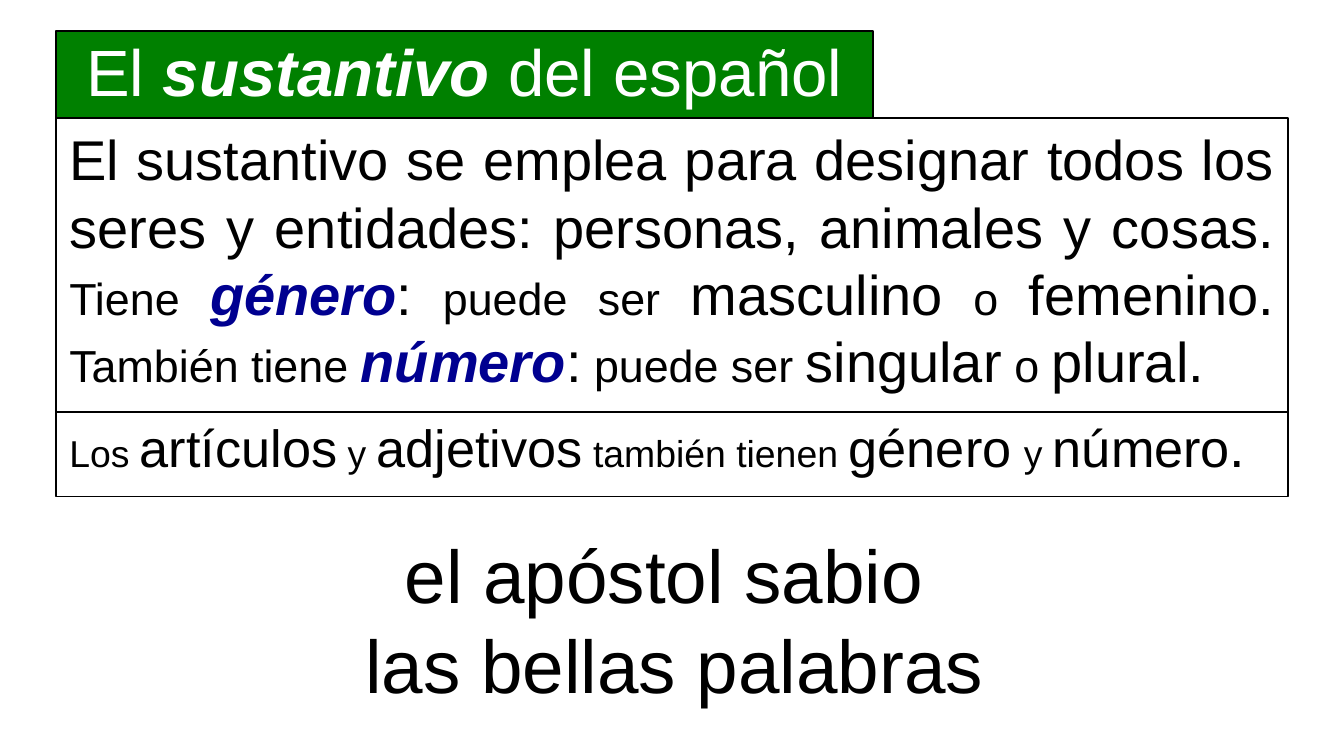
from pptx import Presentation
from pptx.dml.color import RGBColor
from pptx.enum.shapes import MSO_SHAPE
from pptx.enum.text import MSO_ANCHOR, MSO_AUTO_SIZE, PP_ALIGN
from pptx.util import Cm, Pt

BLACK = RGBColor(0, 0, 0)
WHITE = RGBColor(255, 255, 255)
GREEN = RGBColor(0, 0x80, 0)
NAVY = RGBColor(0, 0, 0x90)

# Content: paragraphs of (text, size, is key term)
HEADING = [[("El ", 35, False), ("sustantivo ", 35, True),
            ("del español", 35, False)]]
DEFINITION = [[
    ("El sustantivo se emplea para designar todos los seres y entidades: "
     "personas, animales y cosas. ", 30, False),
    ("Tiene ", 24, False), ("género", 30, True), (":", 30, False),
    (" puede ser ", 24, False), ("masculino", 30, False),
    (" o ", 24, False), ("femenino. ", 30, False),
    ("También tiene ", 24, False), ("número", 30, True), (":", 30, False),
    (" puede ser ", 24, False), ("singular", 30, False),
    (" o ", 24, False), ("plural. ", 30, False),
]]
AGREEMENT = [[
    ("Los ", 20, False), ("artículos", 28, False), (" y ", 20, False),
    ("adjetivos", 28, False), (" también tienen ", 20, False),
    ("género", 28, False), (" ", 24, False), ("y ", 20, False),
    ("número", 28, False), (".", 30, False),
]]
EXAMPLES = [[("el apóstol sabio ", 40, False)],
            [("las bellas palabras", 40, False)]]

# Stacked panels share a left edge
LEFT, TOP = Cm(1.06), Cm(0.58)
HEADING_WIDTH, PANEL_WIDTH = Cm(15.44), Cm(23.28)
HEADING_HEIGHT, DEFINITION_HEIGHT, AGREEMENT_HEIGHT = Cm(1.65), Cm(5.55), Cm(1.6)
DEFINITION_TOP = TOP + HEADING_HEIGHT
AGREEMENT_TOP = DEFINITION_TOP + DEFINITION_HEIGHT


def write(shape, paragraphs, *, align, color=BLACK, term_color=NAVY,
          inset_top=Cm(0.13)):
    frame = shape.text_frame
    frame.word_wrap = True
    frame.auto_size = MSO_AUTO_SIZE.NONE
    frame.vertical_anchor = MSO_ANCHOR.TOP
    frame.margin_left = frame.margin_right = Cm(0.25)
    frame.margin_top, frame.margin_bottom = inset_top, Cm(0.13)
    for index, pieces in enumerate(paragraphs):
        paragraph = frame.add_paragraph() if index else frame.paragraphs[0]
        paragraph.alignment = align
        paragraph.space_before = paragraph.space_after = Pt(0)
        for text, size, is_term in pieces:
            run = paragraph.add_run()
            run.text = text
            run.font.name = "Arial"
            run.font.size = Pt(size)
            run.font.bold = run.font.italic = is_term
            run.font.color.rgb = term_color if is_term else color


def outline(shape, fill=None):
    shape.line.color.rgb = BLACK
    shape.line.width = Pt(1)
    if fill is None:
        shape.fill.background()
    else:
        shape.fill.solid()
        shape.fill.fore_color.rgb = fill


def add_panel(slide, top, width, height, fill=None):
    panel = slide.shapes.add_shape(MSO_SHAPE.RECTANGLE, LEFT, top, width, height)
    panel.shadow.inherit = False
    outline(panel, fill)
    return panel


prs = Presentation()
prs.slide_width, prs.slide_height = Cm(25.4), Cm(14.28)
slide = prs.slides.add_slide(prs.slide_layouts[5])

# Green heading
heading = add_panel(slide, TOP, HEADING_WIDTH, HEADING_HEIGHT, GREEN)
write(heading, HEADING, align=PP_ALIGN.CENTER, color=WHITE, term_color=WHITE,
      inset_top=0)

# Definition in the title placeholder
definition = slide.shapes.title
definition.left, definition.top = LEFT, DEFINITION_TOP
definition.width, definition.height = PANEL_WIDTH, DEFINITION_HEIGHT
outline(definition)
write(definition, DEFINITION, align=PP_ALIGN.JUSTIFY)

# Agreement note
agreement = add_panel(slide, AGREEMENT_TOP, PANEL_WIDTH, AGREEMENT_HEIGHT)
write(agreement, AGREEMENT, align=PP_ALIGN.JUSTIFY, inset_top=0)

# Examples
examples = slide.shapes.add_textbox(Cm(5.16), Cm(9.86), Cm(15.16), Cm(3.68))
write(examples, EXAMPLES, align=PP_ALIGN.CENTER)

prs.save("out.pptx")
